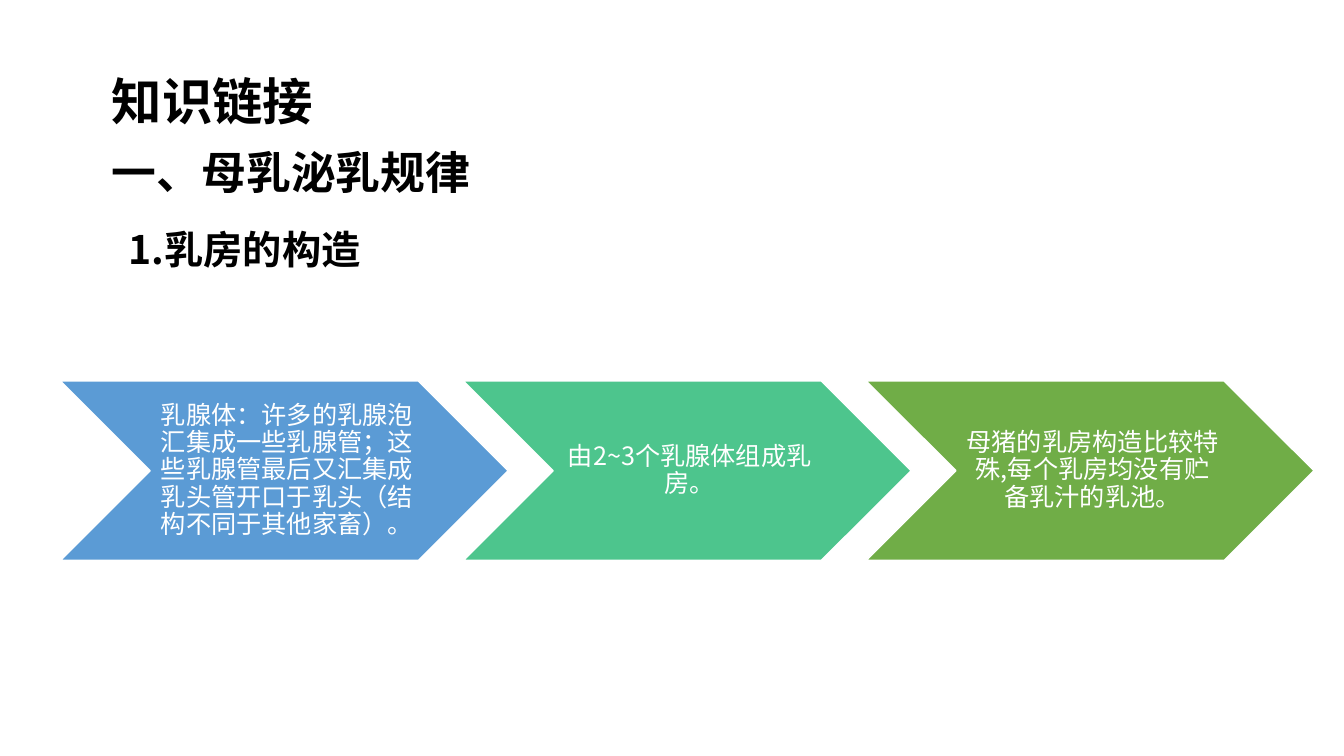
from dataclasses import dataclass

from lxml.etree import SubElement
from pptx import Presentation
from pptx.dml.color import RGBColor
from pptx.enum.shapes import MSO_SHAPE as Shape
from pptx.enum.text import MSO_ANCHOR as Anchor, PP_ALIGN as Align
from pptx.oxml.ns import qn
from pptx.slide import Slide
from pptx.text.text import TextFrame
from pptx.util import Inches, Pt


@dataclass(frozen=True)
class Theme:
    font: str = "Noto Sans CJK SC"
    ink: str = "000000"
    paper: str = "FFFFFF"
    blue: str = "5B9BD5"
    teal: str = "4DC58D"
    green: str = "70AD47"
    title_size: int = 36
    section_size: int = 32
    topic_size: int = 28
    body_size: int = 18


@dataclass(frozen=True)
class Heading:
    text: str
    left: float
    top: float
    width: float
    height: float
    size: int


@dataclass(frozen=True)
class Step:
    text: str
    color: str


THEME = Theme()

HEADINGS = [
    Heading("知识链接", 1.01, 0.65, 7, 0.74, THEME.title_size),
    Heading("一、母乳泌乳规律", 1.01, 1.39, 11.92, 0.64, THEME.section_size),
    Heading("1.乳房的构造", 1.18, 2.19, 6.67, 0.57, THEME.topic_size),
]

STEPS = [
    Step("乳腺体：许多的乳腺泡汇集成一些乳腺管；这些乳腺管最后又汇集成"
         "乳头管开口于乳头（结构不同于其他家畜）。", THEME.blue),
    Step("由2~3个乳腺体组成乳房。", THEME.teal),
    Step("母猪的乳房构造比较特殊,每个乳房均没有贮备乳汁的乳池。", THEME.green),
]

# Chevron row: each step overlaps the notch of the next
STEP_LEFT, STEP_TOP = 0.6, 3.78
STEP_WIDTH, STEP_HEIGHT = 4.44, 1.78
STEP_PITCH = STEP_WIDTH * 0.9
NOTCH = STEP_HEIGHT / 2


def write(frame: TextFrame, text: str, size: int, color: str, bold: bool = False) -> None:
    """Fill a frame with one paragraph in the theme font."""
    frame.word_wrap = True
    paragraph = frame.paragraphs[0]
    paragraph.text = text
    font = paragraph.font
    font.name, font.size, font.bold = THEME.font, Pt(size), bold
    font.color.rgb = RGBColor.from_string(color)
    # Chinese characters take the East Asian typeface
    defaults = paragraph._p.pPr.find(qn("a:defRPr"))
    SubElement(defaults, qn("a:ea")).set("typeface", THEME.font)


def add_heading(slide: Slide, heading: Heading) -> None:
    box = slide.shapes.add_textbox(Inches(heading.left), Inches(heading.top),
                                   Inches(heading.width), Inches(heading.height))
    write(box.text_frame, heading.text, heading.size, THEME.ink, bold=True)


def add_step(slide: Slide, step: Step, left: float) -> None:
    top, height = Inches(STEP_TOP), Inches(STEP_HEIGHT)
    chevron = slide.shapes.add_shape(Shape.CHEVRON, Inches(left), top,
                                     Inches(STEP_WIDTH), height)
    chevron.shadow.inherit = False
    chevron.fill.solid()
    chevron.fill.fore_color.rgb = RGBColor.from_string(step.color)
    chevron.line.color.rgb = RGBColor.from_string(THEME.paper)
    chevron.line.width = Pt(1)

    # The label sits between the notch and the point
    label = slide.shapes.add_textbox(Inches(left + NOTCH), top,
                                     Inches(STEP_WIDTH - 2 * NOTCH), height)
    frame = label.text_frame
    frame.vertical_anchor = Anchor.MIDDLE
    frame.margin_left = Inches(0.08)
    frame.margin_top = frame.margin_right = frame.margin_bottom = Inches(0.03)
    paragraph = frame.paragraphs[0]
    paragraph.alignment = Align.CENTER
    paragraph.line_spacing = 0.9
    write(frame, step.text, THEME.body_size, THEME.paper)


def main() -> None:
    deck = Presentation()
    deck.slide_width, deck.slide_height = Inches(13.33), Inches(7.5)
    slide = deck.slides.add_slide(deck.slide_layouts[6])

    # Headings
    for heading in HEADINGS:
        add_heading(slide, heading)

    # Process steps
    for index, step in enumerate(STEPS):
        add_step(slide, step, STEP_LEFT + index * STEP_PITCH)

    deck.save("out.pptx")


if __name__ == "__main__":
    main()
